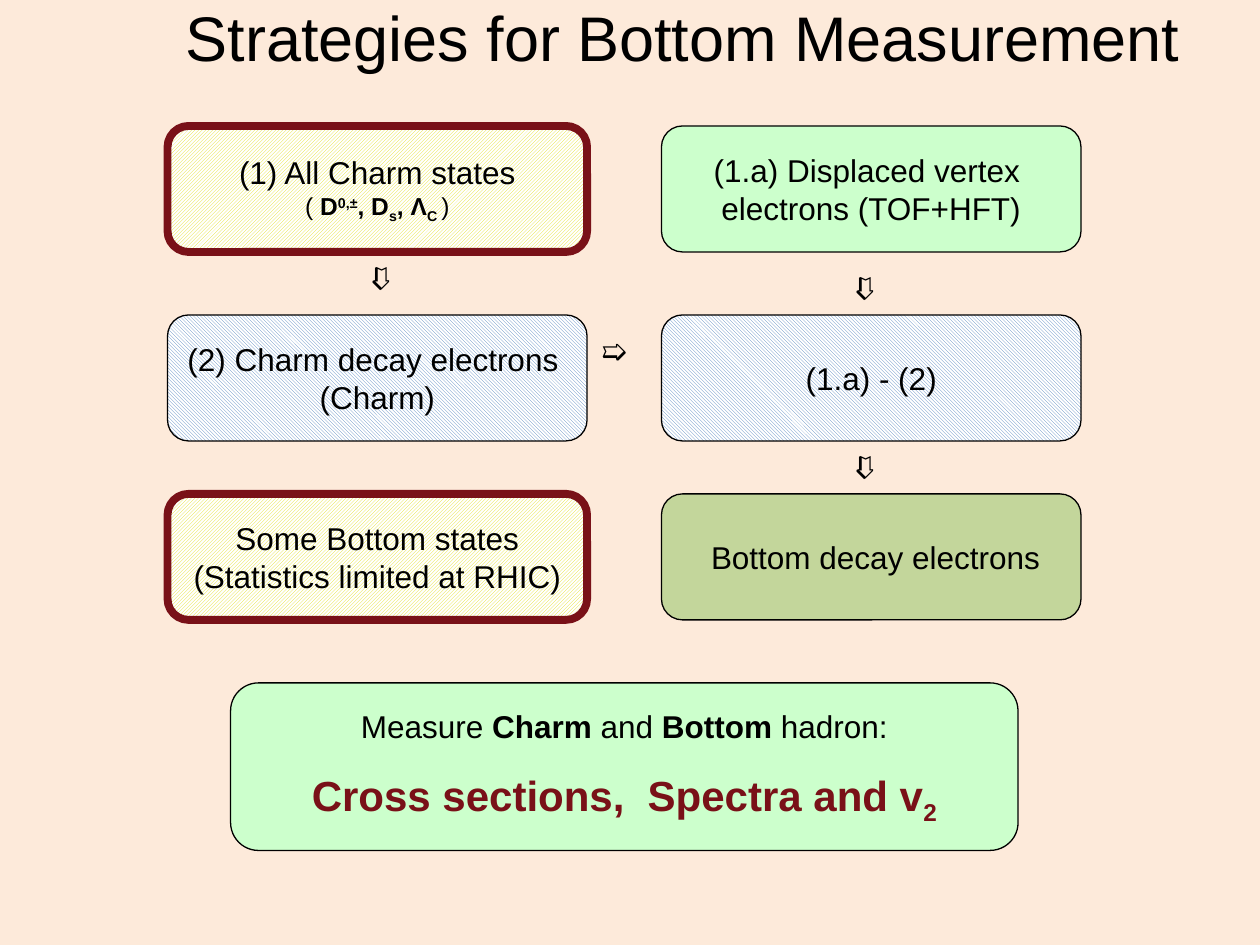
from pptx import Presentation
from pptx.dml.color import RGBColor
from pptx.enum import dml, shapes, text
from pptx.util import Inches, Pt

PEACH = RGBColor(0xFD, 0xEA, 0xDA)
BLACK = RGBColor(0, 0, 0)
WHITE = RGBColor(255, 255, 255)
MAROON = RGBColor(0x79, 0x11, 0x18)
YELLOW = RGBColor(0xE3, 0xDF, 0x1C)
BLUE = RGBColor(0x4F, 0x81, 0xBD)
MINT = RGBColor(0xCC, 0xFF, 0xCC)
OLIVE = RGBColor(0xC3, 0xD6, 0x9B)

UP_HATCH = dml.MSO_PATTERN.LIGHT_UPWARD_DIAGONAL
DOWN_HATCH = dml.MSO_PATTERN.LIGHT_DOWNWARD_DIAGONAL


def add_run(paragraph, words, size=18, bold=False, color=BLACK, baseline=0):
    """Baseline is a percentage: positive raises the run, negative lowers it."""
    run = paragraph.add_run()
    run.text = words
    run.font.name = "Arial"
    run.font.size = Pt(size)
    run.font.bold = bold
    run.font.color.rgb = color
    if baseline:
        run._r.get_or_add_rPr().set("baseline", str(baseline * 1000))


def add_box(left, top, width, height, lines, fill, hatch=None, border=(BLACK, 0.75)):
    """Draw a rounded box; each line is a list of (words, run options)."""
    box = slide.shapes.add_shape(
        shapes.MSO_SHAPE.ROUNDED_RECTANGLE,
        Inches(left), Inches(top), Inches(width), Inches(height))
    box.shadow.inherit = False
    if hatch:
        box.fill.patterned()
        box.fill.pattern = hatch
        box.fill.back_color.rgb = WHITE
    else:
        box.fill.solid()
    box.fill.fore_color.rgb = fill
    box.line.color.rgb, box.line.width = border[0], Pt(border[1])
    frame = box.text_frame
    frame.word_wrap = False
    frame.vertical_anchor = text.MSO_ANCHOR.MIDDLE
    for number, line in enumerate(lines):
        paragraph = frame.add_paragraph() if number else frame.paragraphs[0]
        paragraph.alignment = text.PP_ALIGN.CENTER
        for words, options in line:
            add_run(paragraph, words, **options)
    return box


prs = Presentation()
prs.slide_width, prs.slide_height = Inches(10), Inches(7.5)
slide = prs.slides.add_slide(prs.slide_layouts[6])
slide.background.fill.solid()
slide.background.fill.fore_color.rgb = PEACH

title = slide.shapes.add_textbox(Inches(1.17), 0, Inches(8.5), Inches(0.58)).text_frame
title.word_wrap = True
title.vertical_anchor = text.MSO_ANCHOR.MIDDLE
title.paragraphs[0].alignment = text.PP_ALIGN.CENTER
add_run(title.paragraphs[0], "Strategies for Bottom Measurement", size=36)

# Strategy grid: hadron states on the left, electrons on the right
LEFT, RIGHT = 1.33, 5.25
ROWS = (1, 2.5, 3.92)
small = {"size": 14}
strong = {"size": 14, "bold": True}
charm_hadrons = [
    ("( ", small), ("D", strong), ("0,±", {**strong, "baseline": 30}),
    (", D", strong), ("s", {**strong, "baseline": -25}),
    (", Λ", strong), ("C ", {**strong, "baseline": -25}), (")", small),
]
measured = {"fill": YELLOW, "hatch": UP_HATCH, "border": (MAROON, 4.5)}
derived = {"fill": BLUE, "hatch": DOWN_HATCH}

strategies = [
    (RIGHT, ROWS[0], [[("(1.a) Displaced vertex ", {})],
                      [("electrons (TOF+HFT)", {})]], {"fill": MINT}),
    (LEFT, ROWS[0], [[("(1) All Charm states", {})], charm_hadrons], measured),
    (LEFT, ROWS[1], [[("(2) Charm decay electrons ", {})], [("(Charm)", {})]], derived),
    (RIGHT, ROWS[1], [[("(1.a) - (2)", {})]], derived),
    (RIGHT, ROWS[2], [[(" Bottom decay electrons", {})]], {"fill": OLIVE}),
    (LEFT, ROWS[2], [[(" Some Bottom states ", {})],
                     [("(Statistics limited at RHIC)", {})]], measured),
]
for left, top, lines, style in strategies:
    add_box(left, top, 3.33, 1, lines, **style)

# Goal of the measurement
headline = {"size": 24, "bold": True, "color": MAROON}
goal = add_box(1.83, 5.42, 6.25, 1.33, [
    [("Measure ", {}), ("Charm", {"bold": True}), (" and ", {}),
     ("Bottom", {"bold": True}), (" hadron:", {})],
    [("Cross sections,  Spectra and v", headline), ("2", {**headline, "baseline": -25})],
], MINT)
goal.text_frame.paragraphs[1].space_before = Pt(14)

# Arrows between the steps
for left, top, rotation in ((4.67, 2.58, 0), (6.59, 3.5, 90), (2.75, 2, 90), (6.59, 2.08, 90)):
    arrow = slide.shapes.add_textbox(Inches(left), Inches(top), Inches(0.49), Inches(0.5))
    arrow.rotation = rotation
    arrow.text_frame.word_wrap = False
    arrow.text_frame.auto_size = text.MSO_AUTO_SIZE.SHAPE_TO_FIT_TEXT
    add_run(arrow.text_frame.paragraphs[0], "➯")

prs.save("out.pptx")
